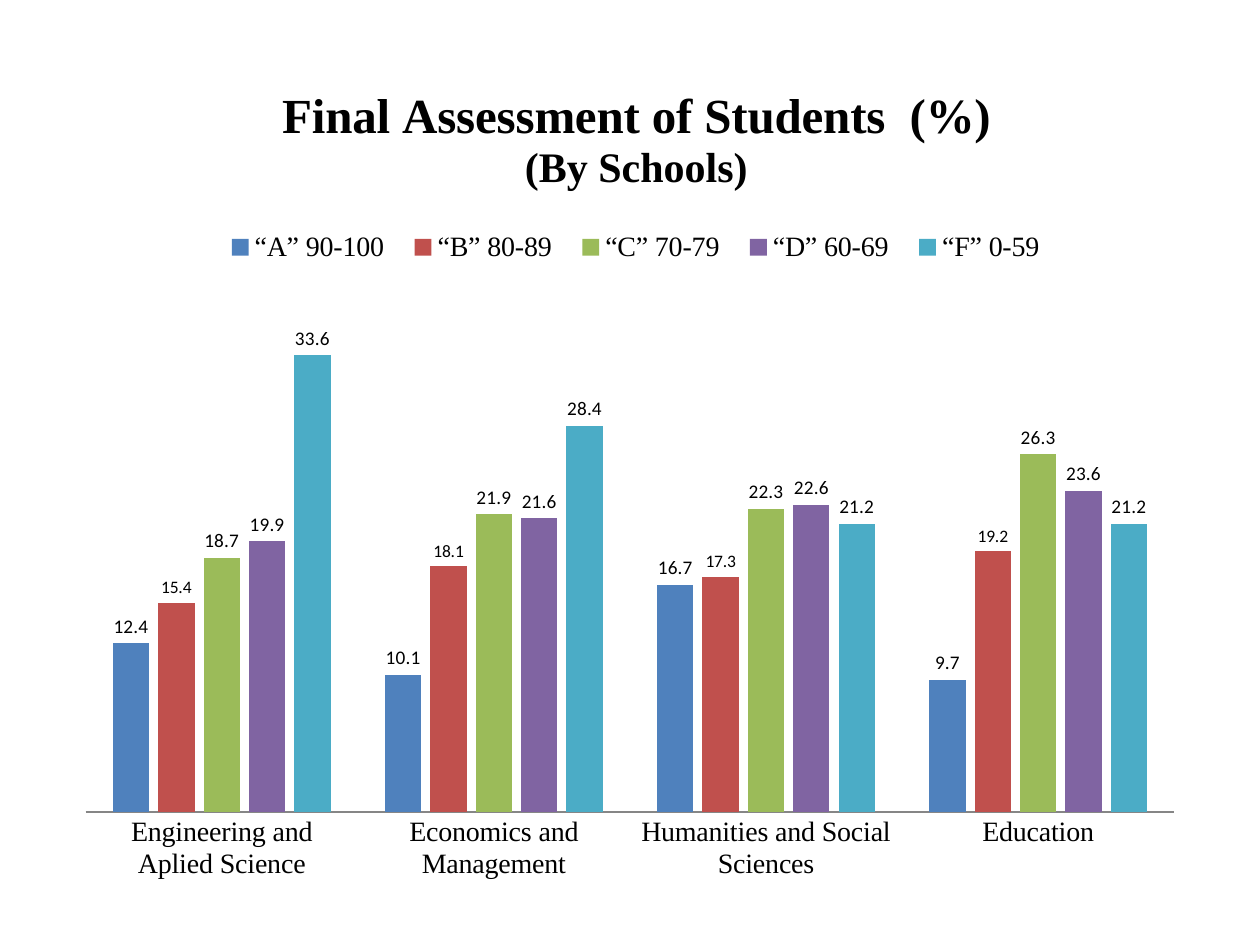
"""Build a slide with a clustered column chart of final grades by school."""
from lxml import etree
from pptx import Presentation
from pptx import util as u
from pptx.chart.data import CategoryChartData
from pptx.dml.color import RGBColor
from pptx.enum import chart as kinds

SERIF = "Times New Roman"
TITLE = [("Final Assessment of Students  (%)", 28), ("(By Schools)", 24)]
SCHOOLS = [
    "Engineering and Aplied Science",
    "Economics and Management",
    "Humanities and Social Sciences",
    "Education",
]
GRADES = [
    ("“A” 90-100", "4F81BD", 11, (12.4, 10.1, 16.7, 9.7)),
    ("“B” 80-89", "C0504D", 10, (15.4, 18.1, 17.3, 19.2)),
    ("“C” 70-79", "9BBB59", 11, (18.7, 21.9, 22.3, 26.3)),
    ("“D” 60-69", "8064A2", 11, (19.9, 21.6, 22.6, 23.6)),
    ("“F” 0-59", "4BACC6", 11, (33.6, 28.4, 21.2, 21.2)),
]
TITLE_PLACE = {"x": 0.19, "y": 0.03}
LEGEND_PLACE = {"x": 0.13, "y": 0.2, "w": 0.75, "h": 0.05}
PLOT_PLACE = {"x": 0.02, "y": 0.25, "w": 0.96, "h": 0.65}


def paint(color_format, value):
    color_format.rgb = RGBColor.from_string(value)


def set_font(font, size, name=SERIF, bold=False):
    font.size, font.name, font.bold = u.Pt(size), name, bold
    font.fill.solid()
    paint(font.fill.fore_color, "000000")


def place(element, before, fractions, inner=False):
    """Give a chart part a manual layout, inserted ahead of the named children."""
    namespace = element.nsmap["c"]
    for old in element.findall(f"{{{namespace}}}layout"):
        element.remove(old)
    layout = etree.Element(f"{{{namespace}}}layout")
    manual = etree.SubElement(layout, f"{{{namespace}}}manualLayout")
    settings = [("layoutTarget", "inner")] if inner else []
    settings += [(f"{key}Mode", "edge") for key in ("x", "y")]
    settings += fractions.items()
    for tag, value in settings:
        etree.SubElement(manual, f"{{{namespace}}}{tag}").set("val", str(value))
    following = [child for child in element if etree.QName(child).localname in before]
    following[0].addprevious(layout)


def add_title(chart):
    frame = chart.chart_title.text_frame
    for index, (line, size) in enumerate(TITLE):
        para = frame.add_paragraph() if index else frame.paragraphs[0]
        para.text = line
        set_font(para.font, size, bold=True)
    title = chart.chart_title
    title.include_in_layout = False
    place(title._element, ("overlay",), TITLE_PLACE)


def add_legend(chart):
    chart.has_legend = True
    legend = chart.legend
    legend.position = kinds.XL_LEGEND_POSITION.TOP
    legend.include_in_layout = False
    set_font(legend.font, 16)
    place(legend._element, ("overlay",), LEGEND_PLACE)


def format_axes(chart):
    schools, percent = chart.category_axis, chart.value_axis
    schools.major_tick_mark = kinds.XL_TICK_MARK.NONE
    schools.format.line.width = u.Pt(0.75)
    paint(schools.format.line.color, "868686")
    set_font(schools.tick_labels.font, 16)
    percent.minimum_scale, percent.maximum_scale = 0, 40
    percent.has_major_gridlines = False
    percent.visible = False


def format_columns(chart):
    plot = chart.plots[0]
    plot.gap_width, plot.overlap = 150, -25
    plot.vary_by_categories = False
    for series, (_, color, size, _) in zip(plot.series, GRADES):
        series.format.fill.solid()
        paint(series.format.fill.fore_color, color)
        labels = series.data_labels
        labels.show_value = True
        labels.number_format, labels.number_format_is_linked = "0.0", False
        labels.position = kinds.XL_LABEL_POSITION.OUTSIDE_END
        set_font(labels.font, size, "Calibri")


def main():
    deck = Presentation()
    deck.slide_width, deck.slide_height = u.Cm(25.4), u.Cm(19.05)
    page = deck.slides.add_slide(deck.slide_layouts[6])
    data = CategoryChartData()
    data.categories = SCHOOLS
    for name, _, _, values in GRADES:
        data.add_series(name, values)
    chart = page.shapes.add_chart(
        kinds.XL_CHART_TYPE.COLUMN_CLUSTERED,
        u.Cm(1.27), u.Cm(1.19), u.Cm(22.86), u.Cm(16.87), data,
    ).chart
    set_font(chart.font, 10, "Calibri")
    add_title(chart)
    add_legend(chart)
    format_axes(chart)
    format_columns(chart)
    plot_area = chart._chartSpace.chart.plotArea
    place(plot_area, ("barChart",), PLOT_PLACE, inner=True)
    deck.save("out.pptx")


if __name__ == "__main__":
    main()
